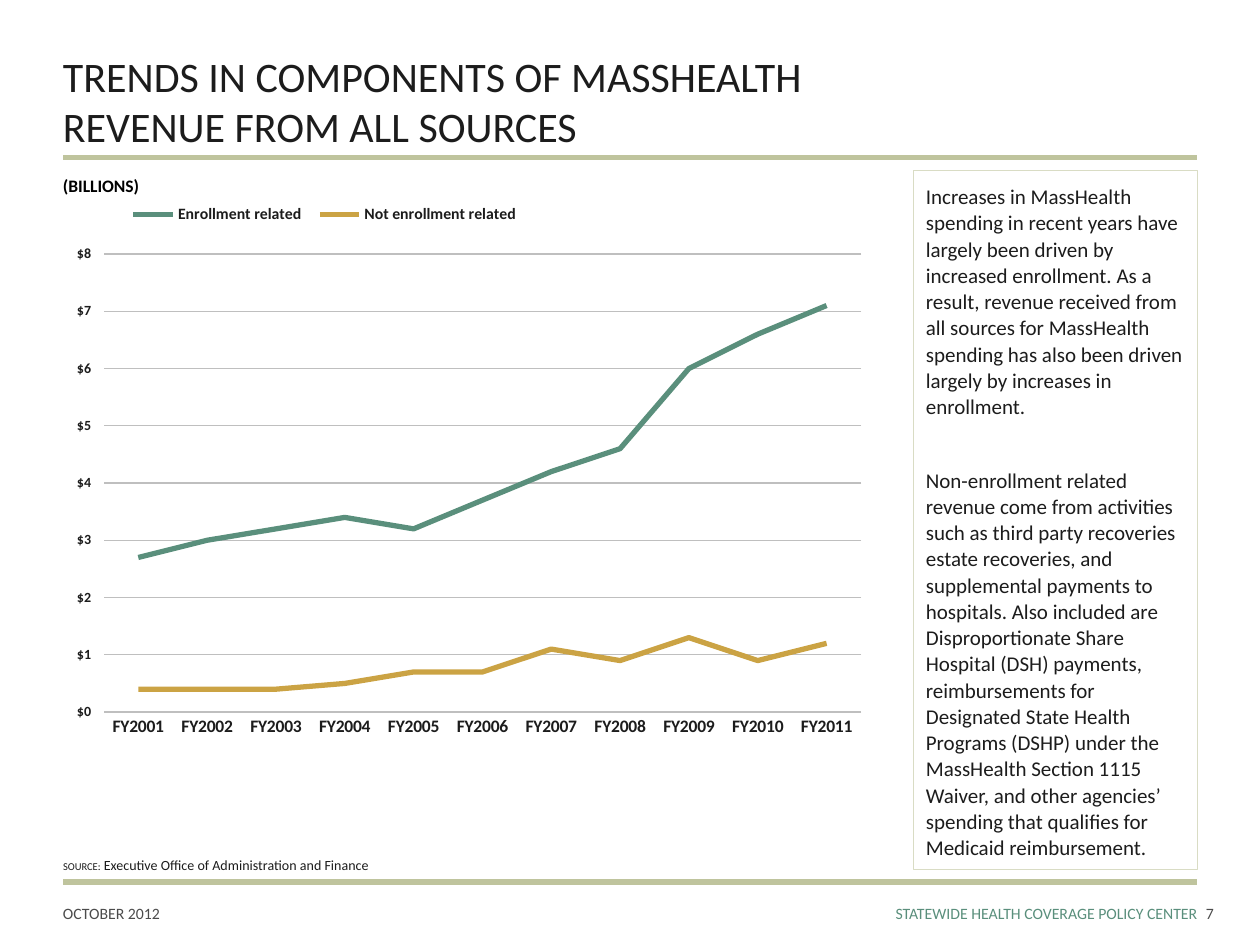
import pptx
import pptx.chart.data
import pptx.dml.color
import pptx.enum.chart
import pptx.enum.shapes
import pptx.enum.text
import pptx.oxml
import pptx.oxml.ns
import pptx.util
from pptx.util import Inches

FONT = "Calibri"
COLORS = {
    "rule": "BFC49D",
    "border": "D9DCC4",
    "text": "1C1C1C",
    "black": "000000",
    "footer": "4B4B4B",
    "green": "5A8F7C",
    "gold": "CBA344",
    "grid": "BFBFBF",
}
YEARS = [f"FY{year}" for year in range(2001, 2012)]
SERIES = [
    ("Enrollment related", "green", [2.7, 3, 3.2, 3.4, 3.2, 3.7, 4.2, 4.6, 6, 6.6, 7.1]),
    ("Not enrollment related", "gold", [0.4, 0.4, 0.4, 0.5, 0.7, 0.7, 1.1, 0.9, 1.3, 0.9, 1.2]),
]
COMMENTARY = [
    "Increases in MassHealth spending in recent years have largely been driven by increased "
    "enrollment. As a result, revenue received from all sources for MassHealth spending has "
    "also been driven largely by increases in enrollment.",
    "Non-enrollment related revenue come from activities such as third party recoveries estate "
    "recoveries, and supplemental payments to hospitals. Also included are Disproportionate "
    "Share Hospital (DSH) payments, reimbursements for Designated State Health Programs (DSHP) "
    "under the MassHealth Section 1115 Waiver, and other agencies’ spending that qualifies for "
    "Medicaid reimbursement.",
]


def rgb(color):
    return pptx.dml.color.RGBColor.from_string(COLORS[color])


def style_font(font, size, color, bold=False):
    font.name = FONT
    font.size = pptx.util.Pt(size)
    font.bold = bold
    font.color.rgb = rgb(color)


def add_run(paragraph, text, size, color, bold=False):
    run = paragraph.add_run()
    run.text = text
    style_font(run.font, size, color, bold)


def set_margins(frame, left, top, right, bottom):
    frame.margin_left, frame.margin_top = Inches(left), Inches(top)
    frame.margin_right, frame.margin_bottom = Inches(right), Inches(bottom)


def add_text(slide, left, top, width, height, runs, padding=0.05, anchor="TOP", align="LEFT"):
    """Add a one-paragraph text box and return its paragraph."""
    box = slide.shapes.add_textbox(Inches(left), Inches(top), Inches(width), Inches(height))
    frame = box.text_frame
    frame.word_wrap = True
    frame.vertical_anchor = getattr(pptx.enum.text.MSO_ANCHOR, anchor)
    set_margins(frame, 0, padding, 0, padding)
    paragraph = frame.paragraphs[0]
    paragraph.alignment = getattr(pptx.enum.text.PP_ALIGN, align)
    for run in runs:
        add_run(paragraph, *run)
    return paragraph


def add_rule(slide, left, top, width):
    rule = slide.shapes.add_connector(
        pptx.enum.shapes.MSO_CONNECTOR.STRAIGHT,
        Inches(left), Inches(top), Inches(left + width), Inches(top))
    rule.line.color.rgb = rgb("rule")
    rule.line.width = pptx.util.Pt(3)
    properties = rule._element.spPr
    properties.append(properties.makeelement(pptx.oxml.ns.qn("a:effectLst"), {}))


def add_header(slide, left, top, width, height):
    title = add_text(slide, left, top, width, height,
                     [("TRENDS IN COMPONENTS OF MASSHEALTH", 24, "text")], anchor="BOTTOM")
    title.add_line_break()
    add_run(title, "REVENUE FROM ALL SOURCES", 24, "text")
    add_rule(slide, left, top + height, width)


def add_footer(slide, left, top, width):
    add_rule(slide, left, top, width)
    text_top, height = top + 0.17, 0.32
    right = left + width
    add_text(slide, left, text_top, 1, height, [("OCTOBER 2012", 9, "footer")], padding=0)
    add_text(slide, right - 4.31, text_top, 4.31, height,
             [("STATEWIDE HEALTH COVERAGE POLICY CENTER", 9, "green")], padding=0, align="RIGHT")
    add_text(slide, right + 0.07, text_top, 0.43, height, [("7", 9, "footer")], padding=0)


def make_layout(x, y, width, height, inner=False):
    """Return a manual chart layout, in fractions of the chart's size."""
    target = '<c:layoutTarget val="inner"/>' if inner else ""
    return pptx.oxml.parse_xml(
        f'<c:layout {pptx.oxml.ns.nsdecls("c")}><c:manualLayout>{target}'
        '<c:xMode val="edge"/><c:yMode val="edge"/>'
        f'<c:x val="{x}"/><c:y val="{y}"/><c:w val="{width}"/><c:h val="{height}"/>'
        '</c:manualLayout></c:layout>')


def set_layouts(chart):
    layout_tag = pptx.oxml.ns.qn("c:layout")
    plot_area = chart._chartSpace.chart.plotArea
    legend = chart.legend._element
    for element in (plot_area, legend):
        for old_layout in element.findall(layout_tag):
            element.remove(old_layout)
    plot_area.insert(0, make_layout(0.05, 0.097, 0.926, 0.808, inner=True))
    legend.find(pptx.oxml.ns.qn("c:legendPos")).addnext(make_layout(0.07, 0, 0.5, 0.055))


def add_revenue_chart(slide, left, top, width, height):
    data = pptx.chart.data.CategoryChartData()
    data.categories = YEARS
    for name, _, values in SERIES:
        data.add_series(name, values)
    chart = slide.shapes.add_chart(
        pptx.enum.chart.XL_CHART_TYPE.LINE,
        Inches(left), Inches(top), Inches(width), Inches(height), data).chart
    chart.has_title = False
    style_font(chart.font, 8, "text", True)

    chart.has_legend = True
    chart.legend.position = pptx.enum.chart.XL_LEGEND_POSITION.TOP
    chart.legend.include_in_layout = False
    style_font(chart.legend.font, 9, "text", True)

    chart.plots[0].vary_by_categories = False
    for series, (_, color, _) in zip(chart.plots[0].series, SERIES):
        series.smooth = False
        series.marker.style = pptx.enum.chart.XL_MARKER_STYLE.NONE
        series.format.line.color.rgb = rgb(color)
        series.format.line.width = pptx.util.Pt(3)

    years, dollars = chart.category_axis, chart.value_axis
    for axis, size in ((years, 10), (dollars, 8)):
        axis.format.line.fill.background()
        style_font(axis.tick_labels.font, size, "text", True)
    years.major_tick_mark = pptx.enum.chart.XL_TICK_MARK.NONE
    dollars.major_tick_mark = pptx.enum.chart.XL_TICK_MARK.CROSS
    dollars.minimum_scale, dollars.maximum_scale, dollars.major_unit = 0, 8, 1
    dollars.tick_labels.number_format = '"$"#,##0'
    dollars.tick_labels.number_format_is_linked = False
    dollars.major_gridlines.format.line.color.rgb = rgb("grid")
    dollars.major_gridlines.format.line.width = pptx.util.Pt(0.75)
    set_layouts(chart)


def add_chart_region(slide, left, top, width, height):
    add_text(slide, left, top, 4.9, 0.27, [("(BILLIONS)", 10, "black", True)])
    add_revenue_chart(slide, left, top + 0.24, width, 4.5)
    source = [
        ("SOURCE", 6, "text"),
        (":", 6, "black"),
        (" ", 8, "black"),
        ("Executive Office of Administration and Finance", 8, "text"),
    ]
    add_text(slide, left, top + height - 0.24, width, 0.24, source, anchor="BOTTOM")


def add_commentary(slide, left, top, width, height):
    panel = slide.shapes.add_shape(
        pptx.enum.shapes.MSO_SHAPE.RECTANGLE,
        Inches(left), Inches(top), Inches(width), Inches(height))
    panel.shadow.inherit = False
    panel.fill.background()
    panel.line.color.rgb = rgb("border")
    panel.line.width = pptx.util.Pt(0.25)
    frame = panel.text_frame
    frame.word_wrap = True
    frame.vertical_anchor = pptx.enum.text.MSO_ANCHOR.TOP
    set_margins(frame, 0.1, 0.1, 0.1, 0.05)
    for index, text in enumerate(COMMENTARY):
        paragraph = frame.add_paragraph() if index else frame.paragraphs[0]
        paragraph.alignment = pptx.enum.text.PP_ALIGN.LEFT
        paragraph.line_spacing = pptx.util.Pt(15)
        paragraph.space_before = pptx.util.Pt(27 if index else 6)
        add_run(paragraph, text, 12, "text")


def main():
    presentation = pptx.Presentation()
    presentation.slide_width, presentation.slide_height = Inches(10), Inches(7.5)
    slide = presentation.slides.add_slide(presentation.slide_layouts[6])
    add_header(slide, 0.5, 0.38, 9, 0.87)
    add_chart_region(slide, 0.5, 1.34, 6.49, 5.64)
    add_commentary(slide, 7.25, 1.35, 2.25, 5.55)
    add_footer(slide, 0.5, 7, 9)
    presentation.save("out.pptx")


if __name__ == "__main__":
    main()
